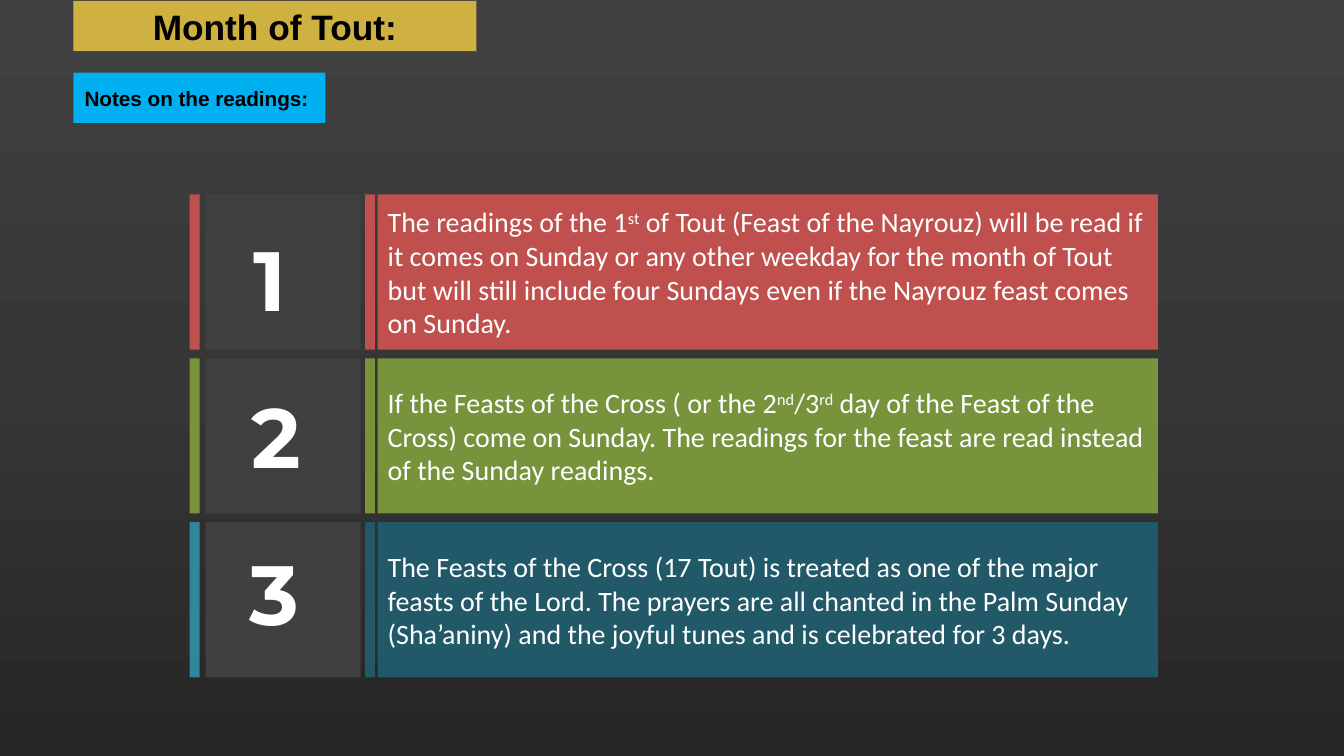
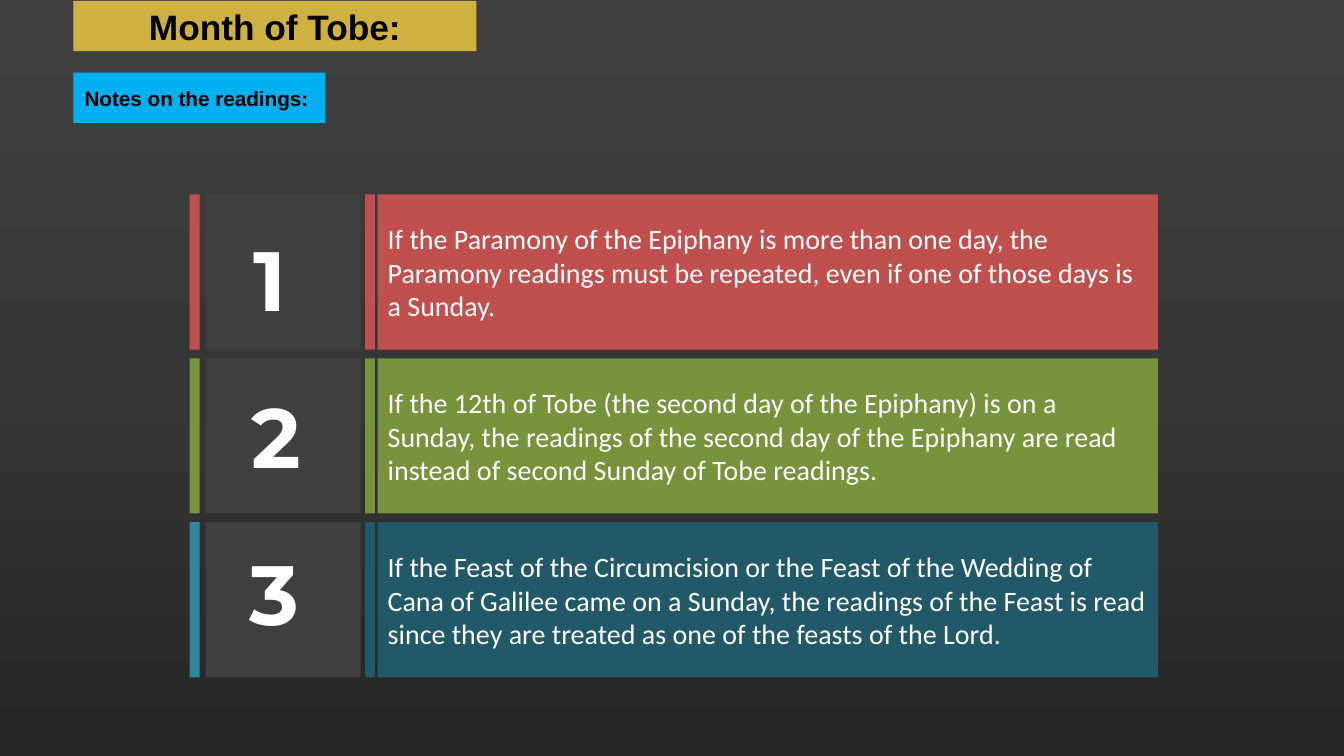
"""Build two slides of numbered notes on the monthly readings."""
import copy

import pptx
import pptx.dml.color
import pptx.enum.shapes
import pptx.enum.text
import pptx.oxml.ns
import pptx.util

Cm = pptx.util.Cm
Pt = pptx.util.Pt
ALIGN = pptx.enum.text.PP_ALIGN
ANCHOR = pptx.enum.text.MSO_ANCHOR

GOLD, SKY, GREY, WHITE, BLACK = "CFB141", "00B0F0", "404040", "FFFFFF", "000000"
BACKGROUND_STOPS = ((0, "262626"), (0.5, "363636"), (1, "404040"))
ROW_COLORS = (("C0504D", "C0504D"), ("77933C", "77933C"), ("31859C", "215968"))

TITLE_FORMAT = {"name": "Arial", "size": Pt(25.2), "bold": True}
SUBTITLE_FORMAT = {"name": "Arial", "size": Pt(14.8), "bold": True}
NOTE_FORMAT = {"name": "Calibri", "size": Pt(20), "bold": False}
NUMBER_FORMAT = {"name": "Montserrat", "size": Pt(60), "bold": True}

HEADER_LEFT, HEADER_HEIGHT = 1.85, 1.27
ROW_TOP, ROW_HEIGHT, ROW_PITCH = 4.9, 3.91, 4.13
BAR_WIDTH, OUTER_BAR_LEFT, INNER_BAR_LEFT = 0.25, 4.78, 9.2
TILE_LEFT, NOTE_LEFT, NOTE_WIDTH = 5.18, 9.52, 19.66
NUMBER_LEFT, NUMBER_SHIFT = 6.15, -0.06
NUMBER_TOP, NUMBER_PITCH = 5.61, 3.95

SLIDES = (
    ("Month of Tout:", (
        "The readings of the 1^st^ of Tout (Feast of the Nayrouz) will be read if it comes on "
        "Sunday or any other weekday for the month of Tout but will still include four Sundays "
        "even if the Nayrouz feast comes on Sunday.",
        "If the Feasts of the Cross ( or the 2^nd^/3^rd^ day of the Feast of the Cross) come on "
        "Sunday. The readings for the feast are read instead of the Sunday readings.",
        "The Feasts of the Cross (17 Tout) is treated as one of the major feasts of the Lord. "
        "The prayers are all chanted in the Palm Sunday (Sha’aniny) and the joyful tunes and is "
        "celebrated for 3 days.",
    )),
    ("Month of Tobe:", (
        "If the Paramony of the Epiphany is more than one day, the Paramony readings must be "
        "repeated, even if one of those days is a Sunday.",
        "If the 12th of Tobe (the second day of the Epiphany) is on a Sunday, the readings of "
        "the second day of the Epiphany are read instead of second Sunday of Tobe readings.",
        "If the Feast of the Circumcision or the Feast of the Wedding of Cana of Galilee came on "
        "a Sunday, the readings of the Feast is read since they are treated as one of the feasts "
        "of the Lord.",
    )),
)


def rgb(color):
    return pptx.dml.color.RGBColor.from_string(color)


def set_background(slide):
    fill = slide.background.fill
    fill.gradient()
    fill.gradient_angle = 90
    stop_list = next(slide.element.iter(pptx.oxml.ns.qn("a:gsLst")))
    stop_list.append(copy.deepcopy(stop_list[-1]))
    for stop, (position, color) in zip(fill.gradient_stops, BACKGROUND_STOPS):
        stop.position = position
        stop.color.rgb = rgb(color)


def write_text(shape, text, text_format, color, alignment):
    paragraph = shape.text_frame.paragraphs[0]
    paragraph.alignment = alignment
    for index, piece in enumerate(text.split("^")):
        run = paragraph.add_run()
        run.text = piece
        for name, value in text_format.items():
            setattr(run.font, name, value)
        run.font.color.rgb = rgb(color)
        if index % 2:
            run.font._element.set("baseline", "30000")


def add_block(slide, left, top, width, height, color):
    shape = slide.shapes.add_shape(
        pptx.enum.shapes.MSO_SHAPE.RECTANGLE, Cm(left), Cm(top), Cm(width), Cm(height))
    shape.shadow.inherit = False
    shape.fill.solid()
    shape.fill.fore_color.rgb = rgb(color)
    shape.line.fill.background()
    shape.text_frame.word_wrap = True
    shape.text_frame.vertical_anchor = ANCHOR.MIDDLE
    return shape


def add_number(slide, index):
    box = slide.shapes.add_textbox(
        Cm(NUMBER_LEFT + index * NUMBER_SHIFT), Cm(NUMBER_TOP + index * NUMBER_PITCH),
        Cm(1.93), Cm(2.82))
    box.text_frame.word_wrap = False
    box.text_frame.auto_size = pptx.enum.text.MSO_AUTO_SIZE.SHAPE_TO_FIT_TEXT
    write_text(box, str(index + 1), NUMBER_FORMAT, WHITE, ALIGN.LEFT)


def add_header(slide, title):
    band = add_block(slide, HEADER_LEFT, 0.02, 10.16, HEADER_HEIGHT, GOLD)
    write_text(band, title, TITLE_FORMAT, BLACK, ALIGN.CENTER)
    label = add_block(slide, HEADER_LEFT, 1.83, 6.35, HEADER_HEIGHT, SKY)
    write_text(label, "Notes on the readings: ", SUBTITLE_FORMAT, BLACK, ALIGN.CENTER)


def add_row(slide, index, note):
    outer_color, note_color = ROW_COLORS[index]
    top = ROW_TOP + index * ROW_PITCH
    for left, width, color in ((OUTER_BAR_LEFT, BAR_WIDTH, outer_color),
                               (TILE_LEFT, ROW_HEIGHT, GREY),
                               (INNER_BAR_LEFT, BAR_WIDTH, note_color)):
        add_block(slide, left, top, width, ROW_HEIGHT, color)
    panel = add_block(slide, NOTE_LEFT, top, NOTE_WIDTH, ROW_HEIGHT, note_color)
    write_text(panel, note, NOTE_FORMAT, WHITE, ALIGN.LEFT)
    add_number(slide, index)


def main():
    presentation = pptx.Presentation()
    presentation.slide_width = Cm(33.87)
    presentation.slide_height = Cm(19.05)
    for title, notes in SLIDES:
        slide = presentation.slides.add_slide(presentation.slide_layouts[6])
        set_background(slide)
        add_header(slide, title)
        for index, note in enumerate(notes):
            add_row(slide, index, note)
    presentation.save("out.pptx")


if __name__ == "__main__":
    main()
